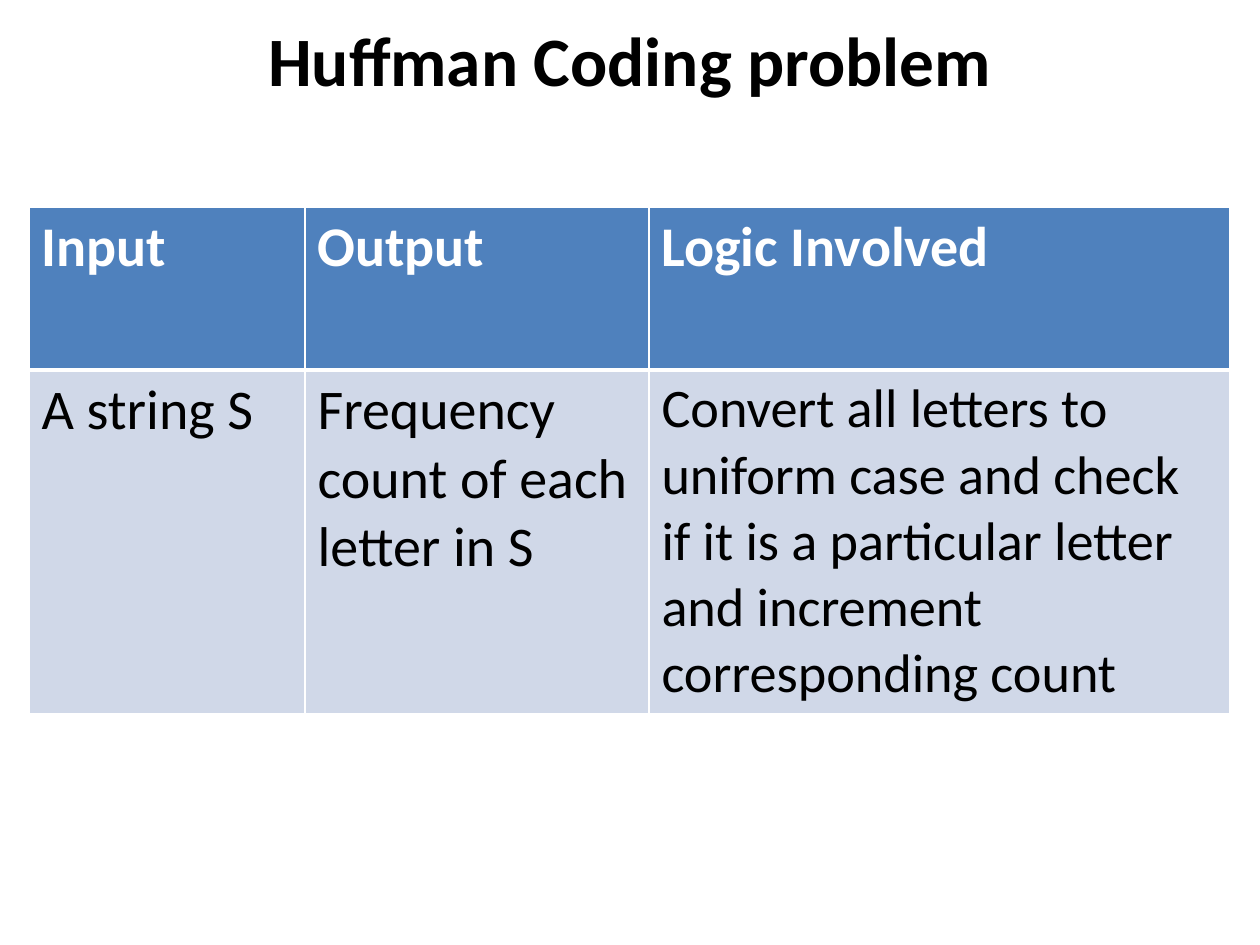
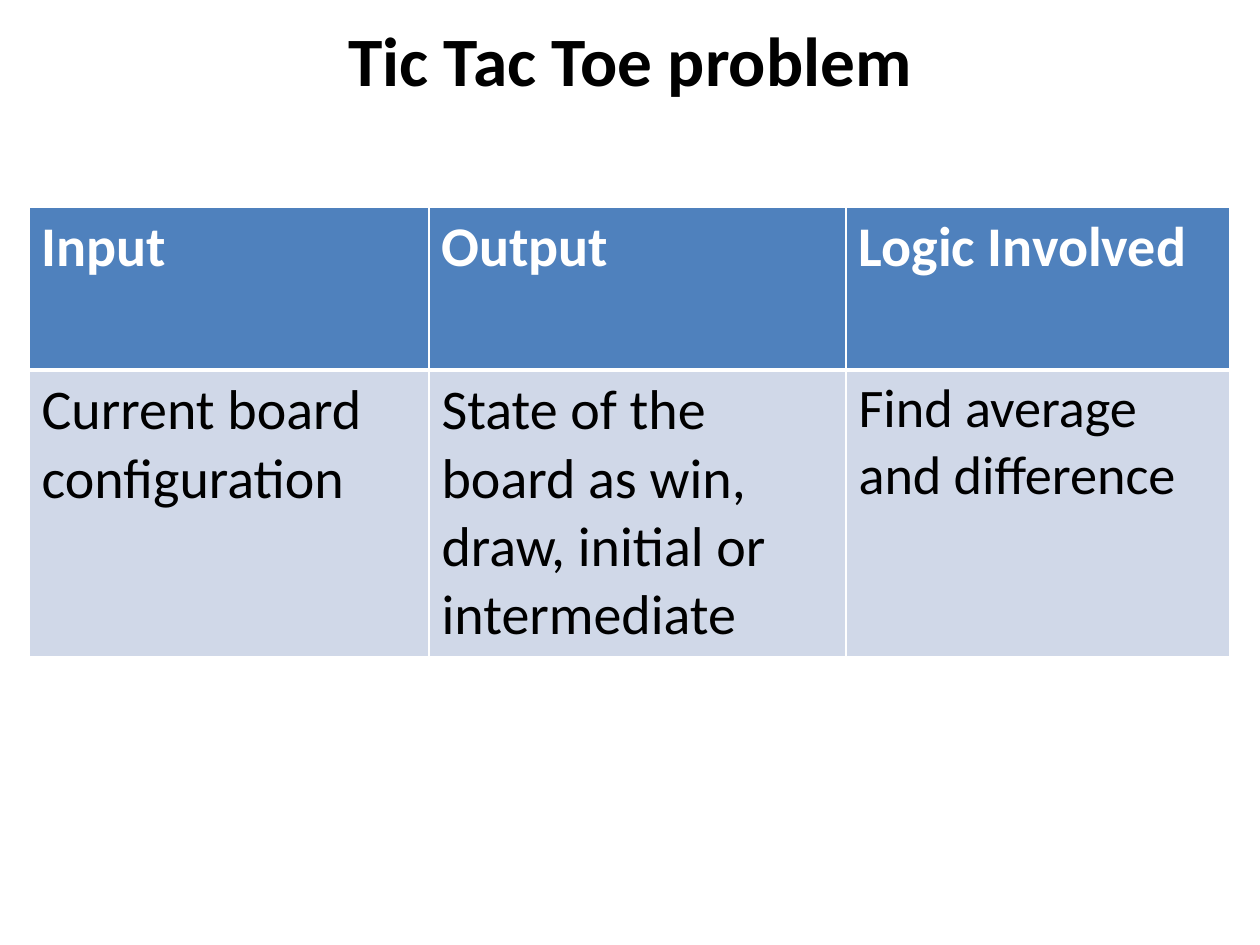
from dataclasses import dataclass

import pptx
import pptx.dml.color
import pptx.enum.text
import pptx.oxml
import pptx.oxml.ns
import pptx.util

EMU_PER_PX = 914400 / 126
FONT = "Calibri"
BLACK = "000000"
WHITE = "FFFFFF"
HEADER_FILL = "4F81BD"
ANSWER_FILL = "D0D8E8"
HEADINGS = ("Input", "Output", "Logic Involved")
HEADER_SIZE = 32
ANSWER_SIZES = (32, 32, 31)
ROW_HEIGHTS = (163, 95)
TITLE_BOX = (63, 10, 1134, 98)
TABLE_LEFT, TABLE_TOP = 29, 207
THIN, THICK = 1, 3


@dataclass(frozen=True)
class Problem:
    title: str
    answers: tuple[str, str, str]
    column_widths: tuple[int, int, int]
    table_height: int


PROBLEMS = (
    Problem(
        "Huffman Coding problem",
        (
            "A string S",
            "Frequency count of each letter in S",
            "Convert all letters to uniform case and check if it is a "
            "particular letter and increment corresponding count",
        ),
        (276, 344, 581),
        500,
    ),
    Problem(
        "Tic Tac Toe problem",
        (
            "Current board configuration",
            "State of the board as win, draw, initial or intermediate",
            "Find average and difference",
        ),
        (400, 417, 384),
        444,
    ),
)


def px(length: int) -> pptx.util.Emu:
    return pptx.util.Emu(round(length * EMU_PER_PX))


def rgb(colour: str) -> pptx.dml.color.RGBColor:
    return pptx.dml.color.RGBColor.from_string(colour)


def write(frame, text: str, *, size: float, colour: str, bold: bool = False, align=None) -> None:
    frame.word_wrap = True
    paragraph = frame.paragraphs[0]
    paragraph.alignment = align
    run = paragraph.add_run()
    run.text = text
    run.font.name = FONT
    run.font.size = pptx.util.Pt(size)
    run.font.bold = bold
    run.font.color.rgb = rgb(colour)


def add_borders(cell, *, top: int, bottom: int) -> None:
    properties = cell._tc.get_or_add_tcPr()
    for side, width in (("L", THIN), ("R", THIN), ("T", top), ("B", bottom)):
        properties.append(pptx.oxml.parse_xml(
            f'<a:ln{side} {pptx.oxml.ns.nsdecls("a")} w="{pptx.util.Pt(width)}">'
            f'<a:solidFill><a:srgbClr val="{WHITE}"/></a:solidFill></a:ln{side}>'
        ))


def style_cell(cell, fill: str, *, top: int, bottom: int) -> None:
    add_borders(cell, top=top, bottom=bottom)
    cell.fill.solid()
    cell.fill.fore_color.rgb = rgb(fill)


def add_title(slide, text: str) -> None:
    title = slide.shapes.title
    title.left, title.top, title.width, title.height = map(px, TITLE_BOX)
    title.text_frame.auto_size = pptx.enum.text.MSO_AUTO_SIZE.NONE
    title.text_frame.vertical_anchor = pptx.enum.text.MSO_ANCHOR.MIDDLE
    write(title.text_frame, text, size=39.6, colour=BLACK, bold=True,
          align=pptx.enum.text.PP_ALIGN.CENTER)


def add_problem_table(slide, problem: Problem) -> None:
    holder = slide.shapes.add_table(
        len(ROW_HEIGHTS), len(HEADINGS), px(TABLE_LEFT), px(TABLE_TOP),
        px(sum(problem.column_widths)), px(problem.table_height),
    )
    table = holder.table
    for row, height in zip(table.rows, ROW_HEIGHTS):
        row.height = px(height)
    for column, width in zip(table.columns, problem.column_widths):
        column.width = px(width)
    holder.height = px(problem.table_height)

    for index, (heading, answer, answer_size) in enumerate(
        zip(HEADINGS, problem.answers, ANSWER_SIZES)
    ):
        heading_cell, answer_cell = table.cell(0, index), table.cell(1, index)
        style_cell(heading_cell, HEADER_FILL, top=THIN, bottom=THICK)
        write(heading_cell.text_frame, heading, size=HEADER_SIZE, colour=WHITE, bold=True)
        style_cell(answer_cell, ANSWER_FILL, top=THICK, bottom=THIN)
        write(answer_cell.text_frame, answer, size=answer_size, colour=BLACK)


def main() -> None:
    presentation = pptx.Presentation()
    presentation.slide_width, presentation.slide_height = px(1260), px(945)
    title_only = presentation.slide_layouts.get_by_name("Title Only")
    for problem in PROBLEMS:
        slide = presentation.slides.add_slide(title_only)
        add_title(slide, problem.title)
        add_problem_table(slide, problem)
    presentation.save("out.pptx")


if __name__ == "__main__":
    main()
